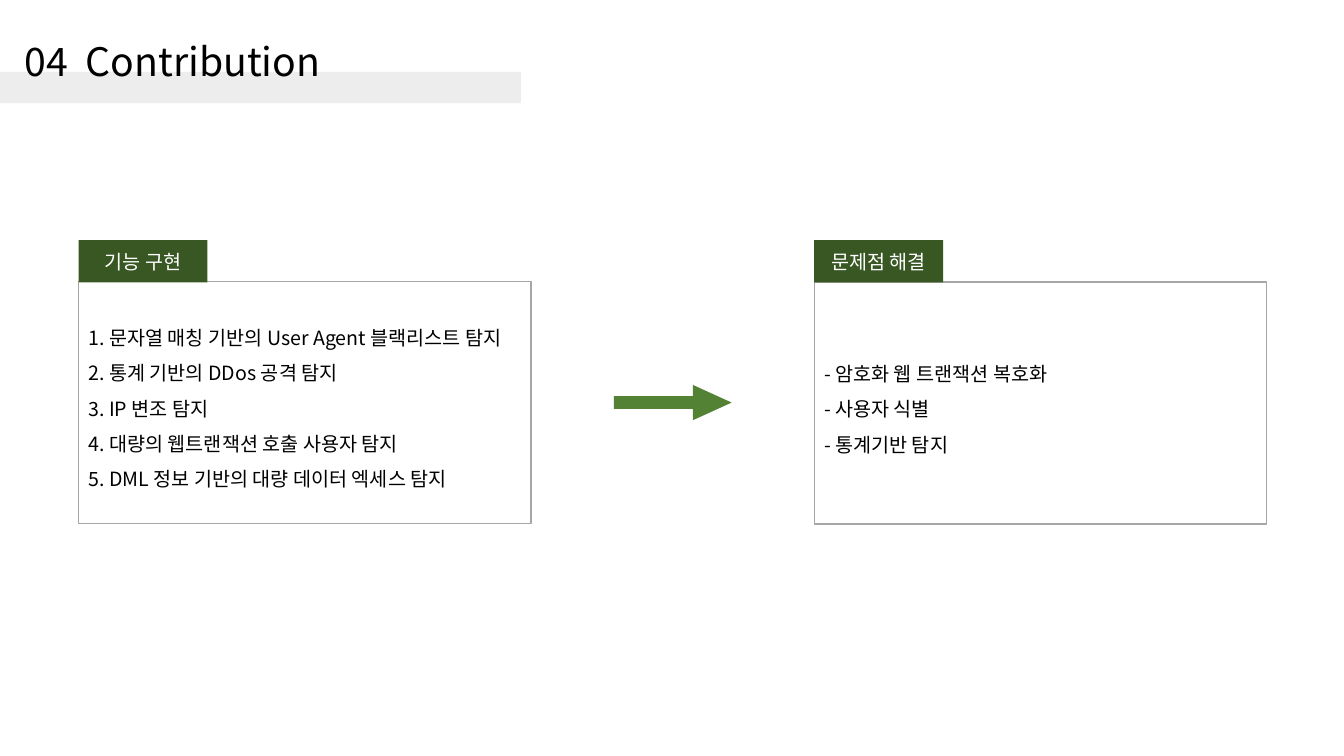
"""Build the Contribution slide: features on the left lead to solved problems on the right."""
from lxml import etree
from pptx import Presentation, util as u
from pptx.dml.color import RGBColor
from pptx.enum import shapes, text
from pptx.oxml.ns import qn

FONT = "Noto Sans CJK KR"
HUES = {
    "black": "000000", "white": "FFFFFF", "band": "EDEDED",
    "edge": "A6A6A6", "arrow": "548235", "tab": "385723",
}
KIND = shapes.MSO_SHAPE
ALIGN = text.PP_ALIGN


def draw(kind, box, fill=None, line=None):
    """Add a shape with a plain fill or outline."""
    shape = slide.shapes.add_shape(kind, *map(u.Cm, box))
    shape.shadow.inherit = False
    if fill:
        shape.fill.solid()
        shape.fill.fore_color.rgb = RGBColor.from_string(HUES[fill])
    else:
        shape.fill.background()
    if line:
        shape.line.color.rgb = RGBColor.from_string(HUES[line])
        shape.line.width = u.Pt(1)
    else:
        shape.line.fill.background()
    return shape


def write(shape, lines, size, hue, align, space):
    """Fill a shape with one paragraph for each line."""
    frame = shape.text_frame
    frame.word_wrap = True
    frame.vertical_anchor = text.MSO_ANCHOR.MIDDLE
    frame.text = "\n".join(lines)
    for para in frame.paragraphs:
        para.alignment = align
        para.line_spacing = space
        font = para.font
        font.size = u.Pt(size)
        font.color.rgb = RGBColor.from_string(HUES[hue])
        font.name = FONT
        etree.SubElement(font._element, qn("a:ea"), typeface=FONT)


deck = Presentation()
deck.slide_width, deck.slide_height = u.Cm(33.87), u.Cm(19.05)
slide = deck.slides.add_slide(deck.slide_layouts[6])

draw(KIND.RECTANGLE, (0, 1.81, 13.13, 0.79), "band")
title = slide.shapes.add_textbox(*map(u.Cm, (0.38, 0.38, 12.29, 2.46)))
write(title, ["04  Contribution"], 28, "black", ALIGN.LEFT, 0.9)

arrow = draw(KIND.RIGHT_ARROW, (15.47, 9.7, 2.97, 0.89), "arrow")
arrow.adjustments[0] = 0.36
arrow.adjustments[1] = 1.1

panels = [
    (1.98, 7.09, "기능 구현", [
        "1. 문자열 매칭 기반의 User Agent 블랙리스트 탐지",
        "2. 통계 기반의 DDos 공격 탐지",
        "3. IP 변조 탐지",
        "4. 대량의 웹트랜잭션 호출 사용자 탐지",
        "5. DML 정보 기반의 대량 데이터 엑세스 탐지",
    ]),
    (20.52, 7.11, "문제점 해결", [
        "- 암호화 웹 트랜잭션 복호화",
        "- 사용자 식별",
        "- 통계기반 탐지",
    ]),
]
for left, top, label, items in panels:
    panel = draw(KIND.RECTANGLE, (left, top, 11.4, 6.1), line="edge")
    write(panel, items, 14, "black", ALIGN.LEFT, 1.5)
    tab = draw(KIND.RECTANGLE, (left, 6.05, 3.25, 1.07), "tab")
    write(tab, [label], 14, "white", ALIGN.CENTER, 1.0)

deck.save("out.pptx")
